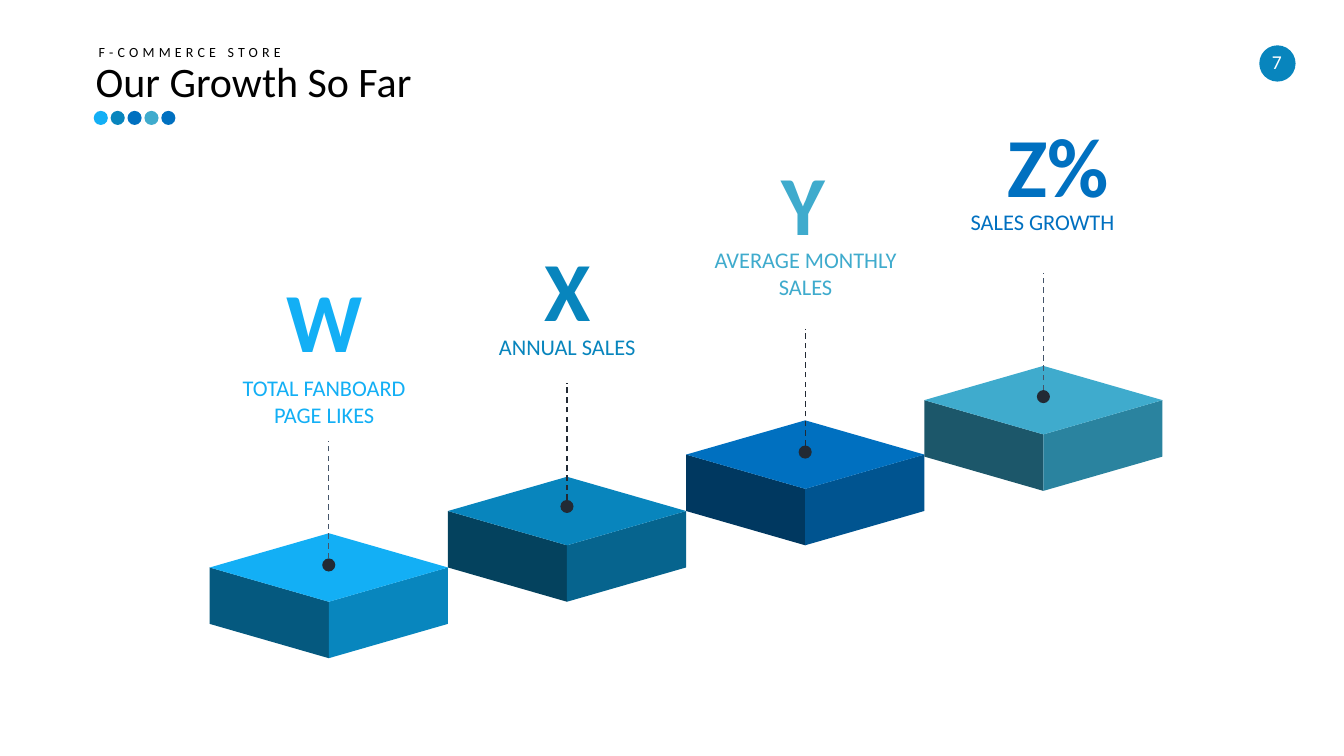
import pptx
import pptx.dml.color
import pptx.enum.dml
import pptx.enum.shapes
import pptx.enum.text
import pptx.oxml.ns
import pptx.util
from lxml import etree

Inches = pptx.util.Inches
Color = pptx.dml.color.RGBColor
Shape = pptx.enum.shapes.MSO_SHAPE

SKY = Color(0x13, 0xAF, 0xF5)
CERULEAN = Color(0x08, 0x85, 0xBD)
BLUE = Color(0x00, 0x70, 0xC0)
TEAL = Color(0x3F, 0xAB, 0xCD)
INK = Color(0x22, 0x2A, 0x34)
SLATE = Color(0x44, 0x54, 0x69)
BLACK = Color(0, 0, 0)
WHITE = Color(0xFF, 0xFF, 0xFF)

# Content: boxes are (left, top, width, height) in inches
HEADINGS = [
    ("F-COMMERCE STORE", (0.88, 0.38, 2.07, 0.27), 10, 3),
    ("Our Growth So Far", (0.85, 0.5, 3.39, 0.61), 30, 0),
]
PAGE_NUMBER = "7"
ACCENT_DOTS = [SKY, CERULEAN, BLUE, TEAL, BLUE]

# Steps: top of block, top of pin dot, pin colour, colours of left, right and top faces
STEPS = [
    (5.29, 5.54, SLATE, (Color(0x05, 0x59, 0x7F), Color(0x08, 0x86, 0xBE), SKY)),
    (4.73, 4.96, INK, (Color(0x04, 0x42, 0x5E), Color(0x06, 0x64, 0x8E), CERULEAN)),
    (4.17, 4.42, INK, (Color(0x00, 0x38, 0x60), Color(0x00, 0x54, 0x90), BLUE)),
    (3.63, 3.87, SLATE, (Color(0x1C, 0x57, 0x6A), Color(0x2A, 0x83, 0x9F), TEAL)),
]
# Figures: value, its box, label, its box, colour
FIGURES = [
    ("W", (2.64, 2.61, 1.16, 1.23),
     "TOTAL FANBOARD PAGE LIKES", (2.19, 3.66, 2.05, 0.64), SKY),
    ("X", (4.8, 2.31, 1.65, 0.88), "ANNUAL SALES", (4.47, 3.26, 2.31, 0.37), CERULEAN),
    ("Y", (7.13, 1.45, 1.67, 1.16),
     "AVERAGE MONTHLY SALES", (6.9, 2.39, 2.18, 0.64), TEAL),
    ("Z%", (9.5, 1.08, 1.99, 1.12), "SALES GROWTH", (9.22, 2.02, 2.24, 0.37), BLUE),
]

# Geometry of one block and its pin
FIRST_LEFT, BLOCK_WIDTH = 2.08, 2.3625
HALF_DEPTH, BLOCK_HEIGHT = 0.34, 0.56
PIN_DOT, PIN_LENGTH = 0.13, 1.16
ACCENT_SIZE, ACCENT_STEP = 0.14, 0.1675


def paint(shape, color):
    shape.shadow.inherit = False
    shape.fill.solid()
    shape.fill.fore_color.rgb = color
    shape.line.fill.background()


def add_dot(page, left, top, size, color):
    dot = page.shapes.add_shape(
        Shape.OVAL, Inches(left), Inches(top), Inches(size), Inches(size))
    paint(dot, color)


def add_face(page, corners, color):
    points = [(Inches(x), Inches(y)) for x, y in corners]
    builder = page.shapes.build_freeform(*points[0], scale=1.0)
    builder.add_line_segments(points[1:], close=True)
    paint(builder.convert_to_shape(), color)


def add_text(page, text, place, size, color, bold=False, centered=True,
             wrap=True, grow=True, spacing=0):
    box = page.shapes.add_textbox(*[Inches(length) for length in place])
    frame = box.text_frame
    frame.word_wrap = wrap
    auto = pptx.enum.text.MSO_AUTO_SIZE
    frame.auto_size = auto.SHAPE_TO_FIT_TEXT if grow else auto.NONE
    para = frame.paragraphs[0]
    if centered:
        para.alignment = pptx.enum.text.PP_ALIGN.CENTER
    span = para.add_run()
    span.text = text
    formats = {"name": "Calibri", "size": pptx.util.Pt(size), "bold": bold}
    for name, value in formats.items():
        setattr(span.font, name, value)
    span.font.color.rgb = color
    if spacing:
        span.font._element.set("spc", str(spacing * 100))


def add_block(page, left, top, colors):
    middle, right = left + BLOCK_WIDTH / 2, left + BLOCK_WIDTH
    side, front = top + HALF_DEPTH, top + 2 * HALF_DEPTH
    faces = []
    for edge in (left, right):
        faces.append([(middle, front + BLOCK_HEIGHT), (edge, side + BLOCK_HEIGHT),
                      (edge, side), (middle, front)])
    faces.append([(right, side), (middle, front), (left, side), (middle, top)])
    for corners, color in zip(faces, colors):
        add_face(page, corners, color)


def add_pin(page, center, top, color):
    add_dot(page, center - PIN_DOT / 2, top, PIN_DOT, INK)
    line = page.shapes.add_connector(
        pptx.enum.shapes.MSO_CONNECTOR.STRAIGHT,
        Inches(center), Inches(top), Inches(center), Inches(top - PIN_LENGTH))
    line.line.color.rgb = color
    line.line.width = pptx.util.Pt(1)
    line.line.dash_style = pptx.enum.dml.MSO_LINE.DASH
    etree.SubElement(line._element.spPr, pptx.oxml.ns.qn("a:effectLst"))


def main():
    deck = pptx.Presentation()
    deck.slide_width, deck.slide_height = Inches(13.33), Inches(7.5)
    page = deck.slides.add_slide(deck.slide_layouts[6])

    # Page number and headings
    add_dot(page, 12.49, 0.45, 0.36, CERULEAN)
    add_text(page, PAGE_NUMBER, (12.45, 0.45, 0.43, 0.34), 14, WHITE, wrap=False)
    for text, place, size, spacing in HEADINGS:
        add_text(page, text, place, size, BLACK, centered=False, wrap=False,
                 spacing=spacing)
    for index, color in enumerate(ACCENT_DOTS):
        add_dot(page, 0.93 + index * ACCENT_STEP, 1.1, ACCENT_SIZE, color)

    # Rising blocks with their pins
    for index, (top, pin_top, pin_color, colors) in enumerate(STEPS):
        left = FIRST_LEFT + index * BLOCK_WIDTH
        add_block(page, left, top, colors)
        add_pin(page, left + BLOCK_WIDTH / 2, pin_top, pin_color)

    # Figures above the pins
    for value, value_place, label, label_place, color in FIGURES:
        add_text(page, value, value_place, 60, color, bold=True, grow=False)
        add_text(page, label, label_place, 16, color)

    deck.save("out.pptx")


if __name__ == "__main__":
    main()
